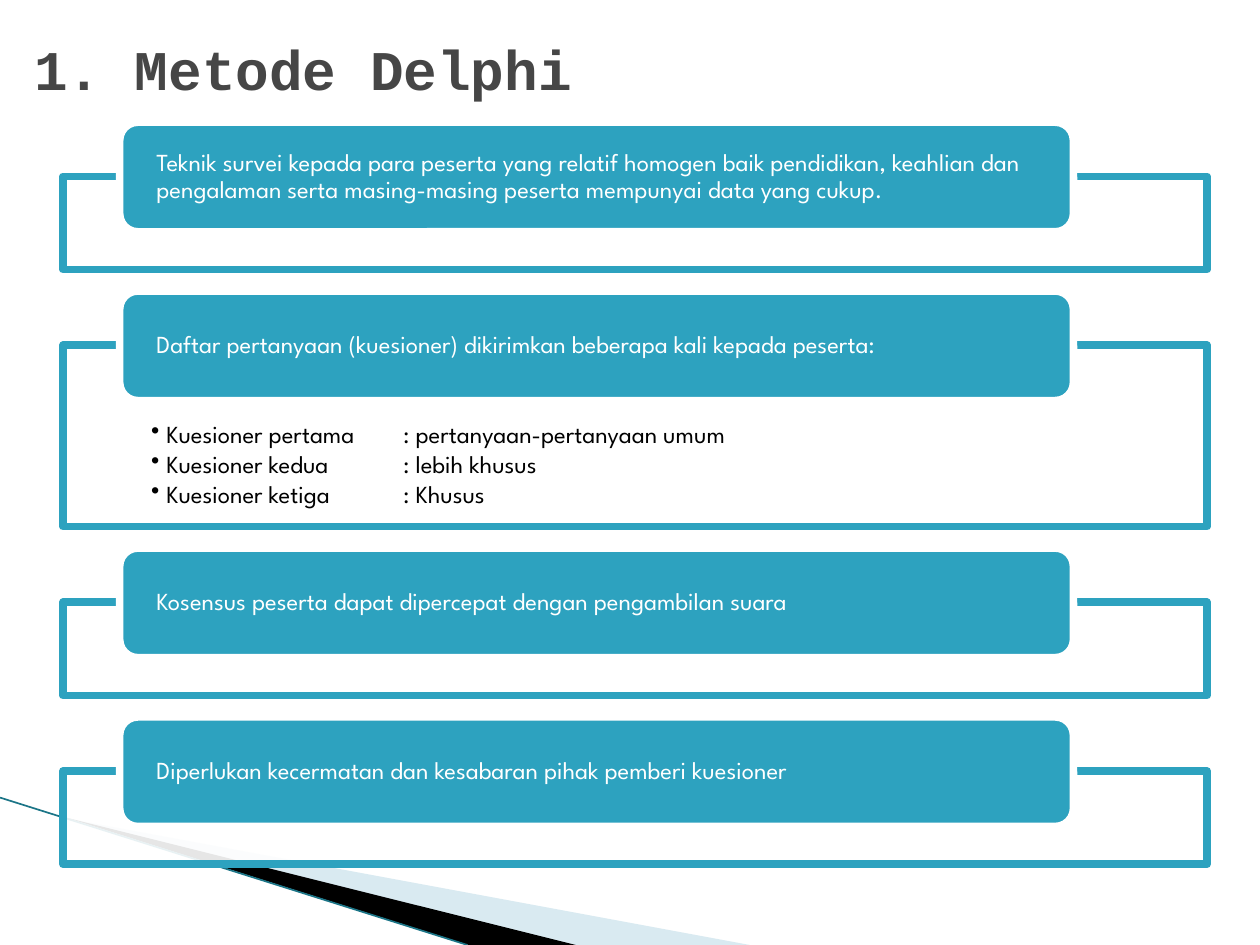
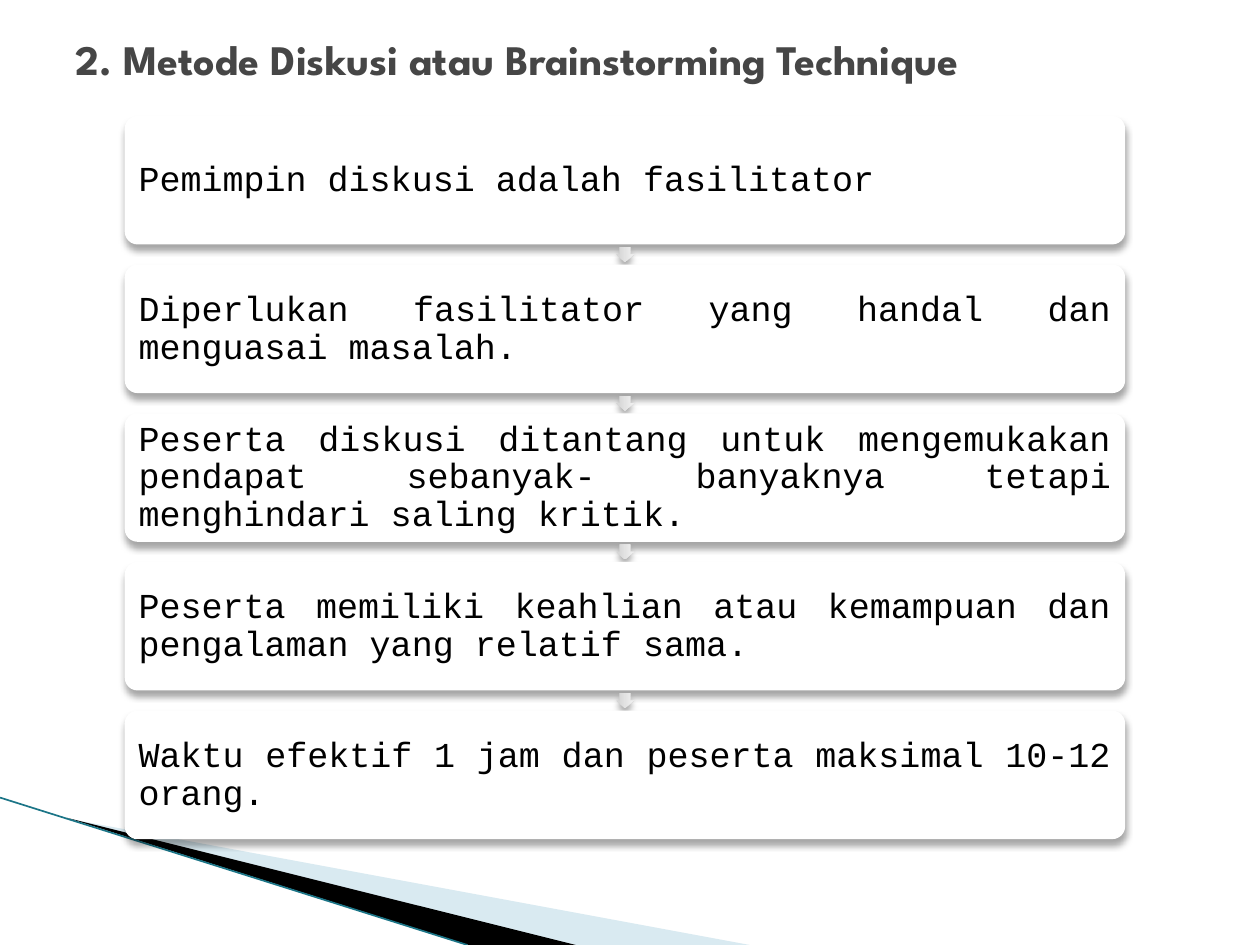
from lxml import etree
from pptx import Presentation, util as u
from pptx.dml.color import RGBColor
from pptx.enum import shapes as sh, text as tx
from pptx.oxml import parse_xml
from pptx.oxml.ns import qn, nsdecls

TEAL, WHITE, BLACK, GRAY = "2DA2BF", "FFFFFF", "000000", "464646"
SANS, MONO = "League Spartan", "Courier New"
hue = RGBColor.from_string
inch = u.Inches


def paint(shape, fill, line=None, wide=4.33, alpha=100):
    shape.shadow.inherit = False
    shape.fill.solid()
    shape.fill.fore_color.rgb = hue(fill)
    if alpha < 100:
        tone = shape.fill._xPr.find(qn("a:solidFill"))[0]
        etree.SubElement(tone, qn("a:alpha"), val=str(alpha * 1000))
    if line:
        shape.line.color.rgb = hue(line)
        shape.line.width = u.Pt(wide)
    else:
        shape.line.fill.background()


def write(shape, lines, font=SANS, size=14, color=WHITE, bold=False, space=0.9,
          align=tx.PP_ALIGN.LEFT, anchor=tx.MSO_ANCHOR.MIDDLE,
          pad=(0.1, 0.05, 0.1, 0.05), tab=None):
    frame = shape.text_frame
    frame.word_wrap = True
    frame.auto_size = tx.MSO_AUTO_SIZE.NONE
    frame.vertical_anchor = anchor
    frame.margin_left, frame.margin_top, frame.margin_right, frame.margin_bottom = map(inch, pad)
    for i, line in enumerate(lines):
        para = frame.paragraphs[0] if i == 0 else frame.add_paragraph()
        run = para.add_run()
        run.text = line
        para.alignment = align
        para.line_spacing = space
        if tab:
            props = para._p.get_or_add_pPr()
            props.set("marL", str(inch(0.12)))
            props.set("indent", str(inch(-0.12)))
            etree.SubElement(props, qn("a:buChar"), char="•")
            stops = etree.SubElement(props, qn("a:tabLst"))
            etree.SubElement(stops, qn("a:tab"), pos=str(inch(tab)), algn="l")
            para.space_after = u.Pt(2)
        run.font.name = font
        run.font.size = u.Pt(size)
        run.font.bold = bold
        run.font.color.rgb = hue(color)


deck = Presentation()
deck.slide_width, deck.slide_height = inch(10), inch(7.5)
plan = deck.slide_layouts[5]

titles = [
    ("1. Metode Delphi", (0.17, 0.25, 9, 0.58), MONO, 32),
    ("2. Metode Diskusi atau Brainstorming Technique", (0.5, 0.08, 9, 0.78), SANS, 24),
]
pages = []
for words, box, font, size in titles:
    page = deck.slides.add_slide(plan)
    title = page.shapes.title
    title.left, title.top, title.width, title.height = map(inch, box)
    write(title, [words], font=font, size=size, color=GRAY, bold=True, space=1)
    pages.append(page)
delphi, storm = pages

wedges = [
    ([(0.55, 6.5), (5.95, 7.5), (4.56, 7.5)], "A0CBDC", 40),
    ([(0.53, 6.49), (4.57, 7.5), (3.72, 7.5)], BLACK, 100),
]
decor = []
for points, color, alpha in wedges:
    start, *rest = [(inch(x), inch(y)) for x, y in points]
    path = delphi.shapes.build_freeform(*start)
    path.add_line_segments(rest, close=True)
    wedge = path.convert_to_shape()
    paint(wedge, color, alpha=alpha)
    decor.append(wedge)
edge = delphi.shapes.add_connector(sh.MSO_CONNECTOR.STRAIGHT, 0, inch(6.33), inch(3.71), inch(7.5))
edge.line.color.rgb = hue("1B7587")
edge.line.width = u.Pt(0.95)
etree.SubElement(edge._element.spPr, qn("a:effectLst"))
for part in decor + [edge]:
    plan.shapes._spTree.append(part._element)

steps = [
    ("Teknik survei kepada para peserta yang relatif homogen baik pendidikan, keahlian dan "
     "pengalaman serta masing-masing peserta mempunyai data yang cukup.", []),
    ("Daftar pertanyaan (kuesioner) dikirimkan beberapa kali kepada peserta:",
     ["Kuesioner pertama\t: pertanyaan-pertanyaan umum",
      "Kuesioner kedua\t: lebih khusus",
      "Kuesioner ketiga\t: Khusus"]),
    ("Kosensus peserta dapat dipercepat dengan pengambilan suara", []),
    ("Diperlukan kecermatan dan kesabaran pihak pemberi kuesioner", []),
]
top = 1.4
for head, items in steps:
    tall = 1.44 if items else 0.74
    frame = delphi.shapes.add_shape(sh.MSO_SHAPE.RECTANGLE, inch(0.5), inch(top), inch(9.08), inch(tall))
    paint(frame, WHITE, line=TEAL, alpha=90)
    if items:
        write(frame, items, color=BLACK, anchor=tx.MSO_ANCHOR.TOP, pad=(0.7, 0.61, 0.7, 0.11), tab=2)
    label = delphi.shapes.add_shape(
        sh.MSO_SHAPE.ROUNDED_RECTANGLE, inch(0.95), inch(top - 0.43), inch(7.57), inch(0.87))
    paint(label, TEAL, line=WHITE)
    write(label, [head], pad=(0.25, 0, 0.25, 0))
    top += tall + 0.6

rules = [
    "Pemimpin diskusi adalah fasilitator",
    "Diperlukan fasilitator yang handal dan menguasai masalah.",
    "Peserta diskusi ditantang untuk mengemukakan pendapat sebanyak- banyaknya tetapi "
    "menghindari saling kritik.",
    "Peserta memiliki keahlian atau kemampuan dan pengalaman yang relatif sama.",
    "Waktu efektif 1 jam dan peserta maksimal 10-12 orang.",
]
shade = (f'<a:effectLst {nsdecls("a")}><a:outerShdw blurRad="50800" dist="38100" dir="5400000" '
         'rotWithShape="0"><a:srgbClr val="000000"><a:alpha val="35000"/></a:srgbClr>'
         '</a:outerShdw></a:effectLst>')
for i, rule in enumerate(rules):
    top = 0.92 + 1.18 * i
    card = storm.shapes.add_shape(
        sh.MSO_SHAPE.ROUNDED_RECTANGLE, inch(0.99), inch(top), inch(7.94), inch(1.02))
    card.adjustments[0] = 0.1
    paint(card, WHITE)
    write(card, [rule], font=MONO, size=20, color=BLACK, align=tx.PP_ALIGN.JUSTIFY, pad=(0.08,) * 4)
    raised = [card]
    if i < len(rules) - 1:
        arrow = storm.shapes.add_shape(
            sh.MSO_SHAPE.RIGHT_ARROW, inch(4.9), inch(top + 1.03), inch(0.12), inch(0.14))
        arrow.rotation = 90
        arrow.adjustments[0] = 0.6
        paint(arrow, WHITE)
        arrow.fill.gradient()
        arrow.fill.gradient_angle = 90
        for stop, color in zip(arrow.fill.gradient_stops, ("D3D3D3", "F0F0F0")):
            stop.color.rgb = hue(color)
        raised.append(arrow)
    for shape in raised:
        props = shape._element.spPr
        props.replace(props.find(qn("a:effectLst")), parse_xml(shade))

deck.save("out.pptx")
